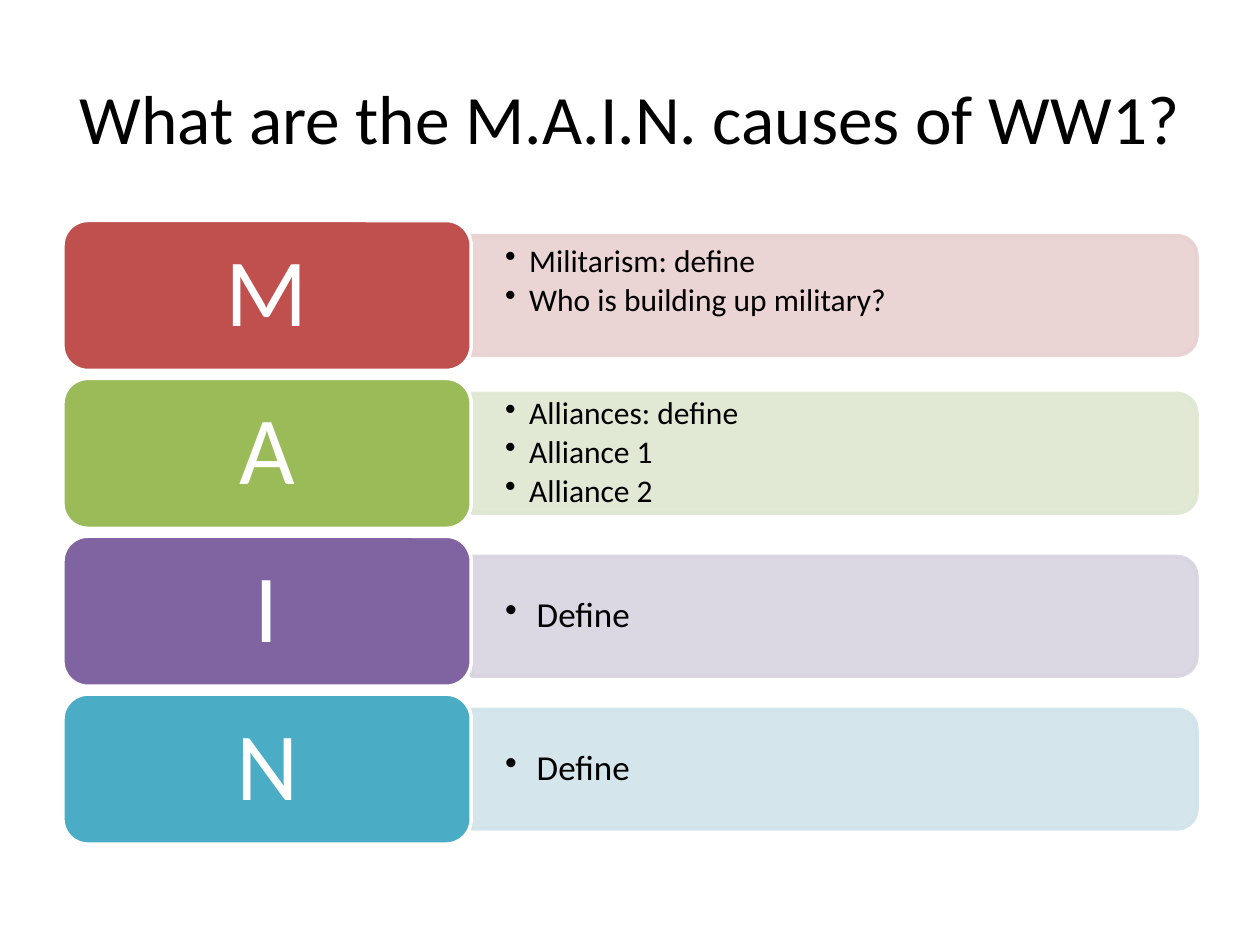
from lxml.etree import SubElement
from pptx import Presentation
from pptx.dml.color import RGBColor
from pptx.enum.shapes import MSO_SHAPE
from pptx.enum.text import MSO_ANCHOR, PP_ALIGN
from pptx.oxml.ns import qn
from pptx.util import Inches, Pt

TITLE = "What are the M.A.I.N. causes of WW1?"
# "lift" is extra room below the bullets, "drop" moves the panel down
ROWS = [
    dict(letter="M", tile="C0504D", panel="E8D0D0", size=18, hang=0.19, lift=0.22,
         bullets=["Militarism: define", "Who is building up military?"]),
    dict(letter="A", tile="9BBB59", panel="DEE7D1", size=18, hang=0.19,
         bullets=["Alliances: define", "Alliance 1", "Alliance 2"]),
    dict(letter="I", tile="8064A2", panel="D8D3E0", size=20, hang=0.25, drop=0.04,
         bullets=["Define"]),
    dict(letter="N", tile="4BACC6", panel="D0E3EA", size=20, hang=0.25,
         bullets=["Define"]),
]
THEME = dict(font="Calibri", title=39.6, letter=55, text="000000", light="FFFFFF",
             line=2, opacity=90)

SLIDE_W, SLIDE_H = 10, 7.5
MARGIN = SLIDE_W * 0.05
CONTENT_W = SLIDE_W - 2 * MARGIN
TILE_W, TILE_H = CONTENT_W * 0.36, 1.19
PANEL_X, PANEL_W, PANEL_H = MARGIN + TILE_W, CONTENT_W * 0.64, 0.95
FIRST_Y, ROW_PITCH = 1.75, 1.253


def add_run(p, text, size, color):
    r = p.add_run()
    r.text = text
    r.font.name = THEME["font"]
    r.font.size = Pt(size)
    r.font.color.rgb = RGBColor.from_string(color)


def set_frame(tf, left=0.1, top=0.05, right=0.1, bottom=0.05):
    tf.word_wrap = True
    tf.vertical_anchor = MSO_ANCHOR.MIDDLE
    tf.margin_left, tf.margin_top = Inches(left), Inches(top)
    tf.margin_right, tf.margin_bottom = Inches(right), Inches(bottom)


def add_block(s, kind, x, y, w, h, fill, line):
    sp = s.shapes.add_shape(kind, Inches(x), Inches(y), Inches(w), Inches(h))
    sp.shadow.inherit = False
    sp.fill.solid()
    sp.fill.fore_color.rgb = RGBColor.from_string(fill)
    sp.line.color.rgb = RGBColor.from_string(line)
    sp.line.width = Pt(THEME["line"])
    return sp


def add_textbox(s, x, y, w, h):
    return s.shapes.add_textbox(Inches(x), Inches(y), Inches(w), Inches(h)).text_frame


def add_bullet(p, text, size, hang):
    pPr = p._p.get_or_add_pPr()
    pPr.set("marL", str(Inches(hang)))
    pPr.set("indent", str(-Inches(hang)))
    p.line_spacing = 0.9
    p.space_after = Pt(round(size * 0.15, 1))
    SubElement(pPr, qn("a:buChar"), char="•")
    add_run(p, text, size, THEME["text"])


def add_panel(s, row, center_y):
    """Draw the panel as a quarter-turned shape, with level text over it."""
    center_x = PANEL_X + PANEL_W / 2
    sp = add_block(s, MSO_SHAPE.ROUND_2_SAME_RECTANGLE,
                   center_x - PANEL_H / 2, center_y - PANEL_W / 2,
                   PANEL_H, PANEL_W, row["panel"], row["panel"])
    sp.rotation = 90
    for color in sp._element.spPr.iter(qn("a:srgbClr")):
        SubElement(color, qn("a:alpha"), val=str(THEME["opacity"] * 1000))

    tf = add_textbox(s, PANEL_X, center_y - PANEL_H / 2, PANEL_W, PANEL_H)
    set_frame(tf, 0.27, 0, 0.27, row.get("lift", 0))
    for i, text in enumerate(row["bullets"]):
        p = tf.add_paragraph() if i else tf.paragraphs[0]
        add_bullet(p, text, row["size"], row["hang"])


def add_tile(s, row, y):
    sp = add_block(s, MSO_SHAPE.ROUNDED_RECTANGLE, MARGIN, y, TILE_W, TILE_H,
                   row["tile"], THEME["light"])
    set_frame(sp.text_frame, 0.29, 0.17, 0.29, 0.17)
    p = sp.text_frame.paragraphs[0]
    p.alignment = PP_ALIGN.CENTER
    p.line_spacing = 0.9
    add_run(p, row["letter"], THEME["letter"], THEME["light"])


def main():
    prs = Presentation()
    prs.slide_width, prs.slide_height = Inches(SLIDE_W), Inches(SLIDE_H)
    s = prs.slides.add_slide(prs.slide_layouts[6])

    tf = add_textbox(s, MARGIN, SLIDE_H * 0.04, CONTENT_W, 1.25)
    set_frame(tf)
    tf.paragraphs[0].alignment = PP_ALIGN.CENTER
    add_run(tf.paragraphs[0], TITLE, THEME["title"], THEME["text"])

    for i, row in enumerate(ROWS):
        y = FIRST_Y + i * ROW_PITCH
        add_panel(s, row, y + TILE_H / 2 + row.get("drop", 0))
        add_tile(s, row, y)
    prs.save("out.pptx")


if __name__ == "__main__":
    main()
